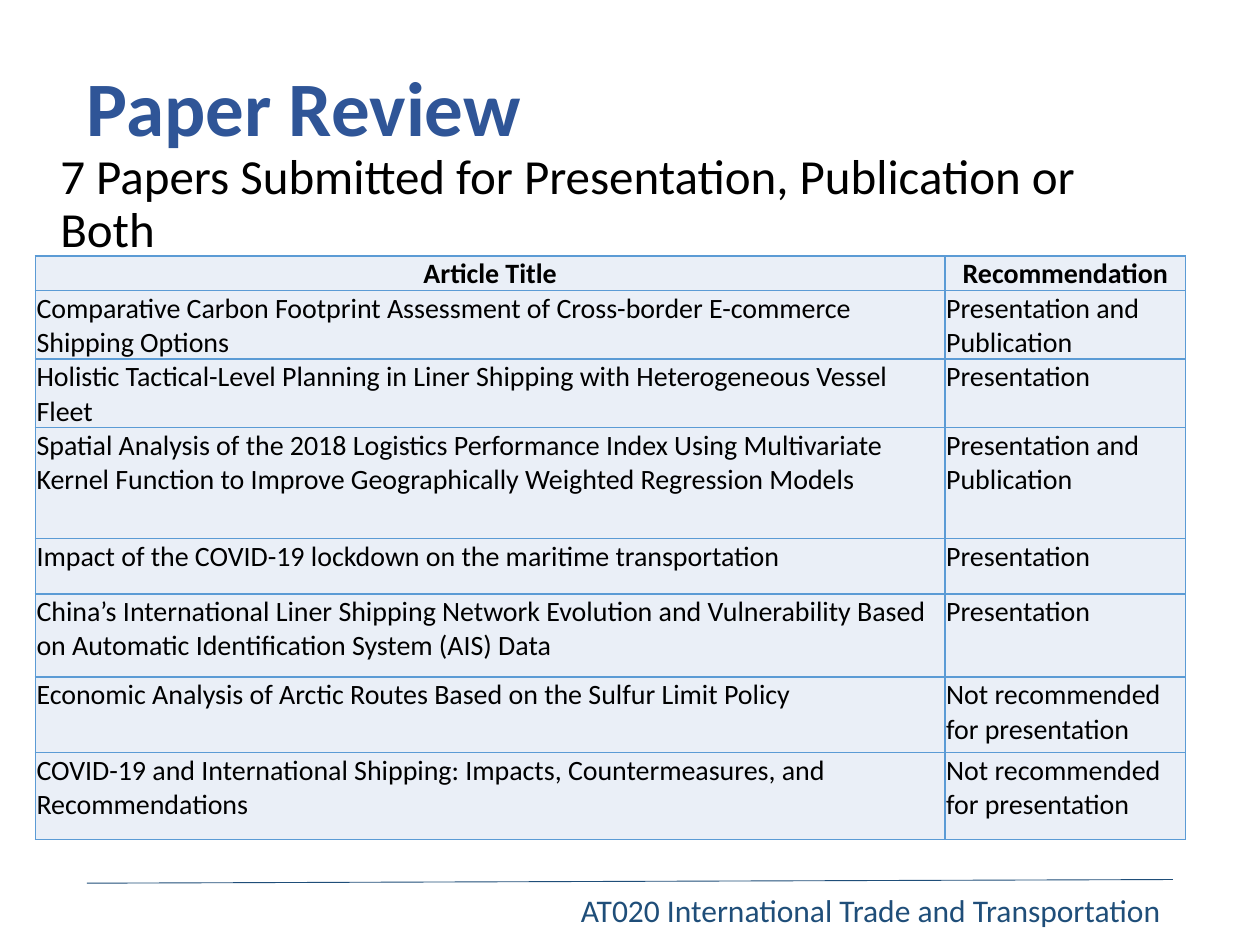
from dataclasses import dataclass

from lxml.etree import SubElement
from pptx import Presentation
from pptx.dml.color import RGBColor
from pptx.enum.shapes import MSO_CONNECTOR
from pptx.enum.text import MSO_ANCHOR, MSO_AUTO_SIZE, PP_ALIGN
from pptx.oxml.ns import qn
from pptx.slide import Slide
from pptx.table import _Cell as Cell
from pptx.util import Pt

FONT = "Calibri"
HUES = {"title": "2F5597", "foot": "1F4E79", "text": "000000",
        "cell": "EAEFF7", "edge": "5B9BD5"}
WIDTHS = (519.8, 137.5)


@dataclass
class Label:
    text: str
    box: tuple[float, float, float, float]
    size: float
    hue: str
    bold: bool = False
    align: PP_ALIGN = PP_ALIGN.LEFT
    anchor: MSO_ANCHOR = MSO_ANCHOR.MIDDLE
    space: float = 0.9
    fit: MSO_AUTO_SIZE = MSO_AUTO_SIZE.NONE


@dataclass
class Row:
    title: str
    advice: str
    height: float
    head: bool = False


LABELS = (
    Label("Paper Review", (42.5, 24.5, 620.6, 78.5), 44, "title", True),
    Label("AT020 International Trade and Transportation",
          (306, 505.4, 364.3, 29.1), 18, "foot", align=PP_ALIGN.RIGHT,
          anchor=MSO_ANCHOR.TOP, space=1.0, fit=MSO_AUTO_SIZE.SHAPE_TO_FIT_TEXT),
    Label("7 Papers Submitted for Presentation, Publication or Both",
          (27.4, 64.8, 650.2, 104.4), 28, "text"),
)
ROWS = (
    Row("Article Title", "Recommendation", 16.6, True),
    Row("Comparative Carbon Footprint Assessment of Cross-border E-commerce "
        "Shipping Options", "Presentation and Publication", 32.4),
    Row("Holistic Tactical-Level Planning in Liner Shipping with Heterogeneous "
        "Vessel Fleet", "Presentation", 32.4),
    Row("Spatial Analysis of the 2018 Logistics Performance Index Using "
        "Multivariate Kernel Function to Improve Geographically Weighted "
        "Regression Models", "Presentation and Publication", 63.4),
    Row("Impact of the COVID-19 lockdown on the maritime transportation",
        "Presentation", 31.7),
    Row("China’s International Liner Shipping Network Evolution and "
        "Vulnerability Based on Automatic Identification System (AIS) Data",
        "Presentation", 47.5),
    Row("Economic Analysis of Arctic Routes Based on the Sulfur Limit Policy",
        "Not recommended for presentation", 43.2),
    Row("COVID-19 and International Shipping: Impacts, Countermeasures, and "
        "Recommendations", "Not recommended for presentation", 49.7),
)


def tint(name: str) -> RGBColor:
    """Return the named colour."""
    return RGBColor.from_string(HUES[name])


def style(para, size: float, hue: str, bold: bool, align: PP_ALIGN) -> None:
    """Set the font and alignment of a paragraph."""
    para.alignment = align
    font = para.font
    font.name, font.size, font.bold = FONT, Pt(size), bold
    font.color.rgb = tint(hue)


def write(slide: Slide, label: Label) -> None:
    """Add a text box."""
    frame = slide.shapes.add_textbox(*map(Pt, label.box)).text_frame
    frame.word_wrap = True
    frame.auto_size = label.fit
    frame.vertical_anchor = label.anchor
    frame.text = label.text
    para = frame.paragraphs[0]
    para.line_spacing = label.space
    style(para, label.size, label.hue, label.bold, label.align)


def rule(slide: Slide) -> None:
    """Add the footer line."""
    ends = map(Pt, (49.7, 504.7, 670.3, 502.6))
    line = slide.shapes.add_connector(MSO_CONNECTOR.STRAIGHT, *ends)
    line.line.color.rgb = tint("foot")
    line.line.width = Pt(0.5)
    SubElement(line._element.spPr, qn("a:effectLst"))


def edge(cell: Cell) -> None:
    """Draw the four borders of a cell."""
    props = cell._tc.get_or_add_tcPr()
    for side in ("lnL", "lnR", "lnT", "lnB"):
        line = SubElement(props, qn(f"a:{side}"), w=str(Pt(1)))
        fill = SubElement(line, qn("a:solidFill"))
        SubElement(fill, qn("a:srgbClr"), val=HUES["edge"])


def fill(cell: Cell, text: str, head: bool) -> None:
    """Write and style one cell."""
    edge(cell)
    cell.fill.solid()
    cell.fill.fore_color.rgb = tint("cell")
    cell.margin_left = cell.margin_right = cell.margin_top = Pt(0.7)
    cell.margin_bottom = Pt(0)
    cell.vertical_anchor = MSO_ANCHOR.MIDDLE if head else MSO_ANCHOR.TOP
    cell.text = text
    align = PP_ALIGN.CENTER if head else PP_ALIGN.LEFT
    style(cell.text_frame.paragraphs[0], 16, "text", head, align)


def grid(slide: Slide) -> None:
    """Add the table of papers."""
    box = map(Pt, (20.2, 146.2, sum(WIDTHS), 333.4))
    frame = slide.shapes.add_table(len(ROWS), len(WIDTHS), *box)
    table = frame.table
    table.first_row = table.horz_banding = False
    for col, width in zip(table.columns, WIDTHS):
        col.width = Pt(width)
    for line, row in zip(table.rows, ROWS):
        line.height = Pt(row.height)
        for cell, text in zip(line.cells, (row.title, row.advice)):
            fill(cell, text, row.head)
    frame.height = Pt(333.4)


def main() -> None:
    """Build and save the slide."""
    deck = Presentation()
    deck.slide_width, deck.slide_height = Pt(720), Pt(540)
    slide = deck.slides.add_slide(deck.slide_layouts[6])
    rule(slide)
    for label in LABELS:
        write(slide, label)
    grid(slide)
    deck.save("out.pptx")


if __name__ == "__main__":
    main()
